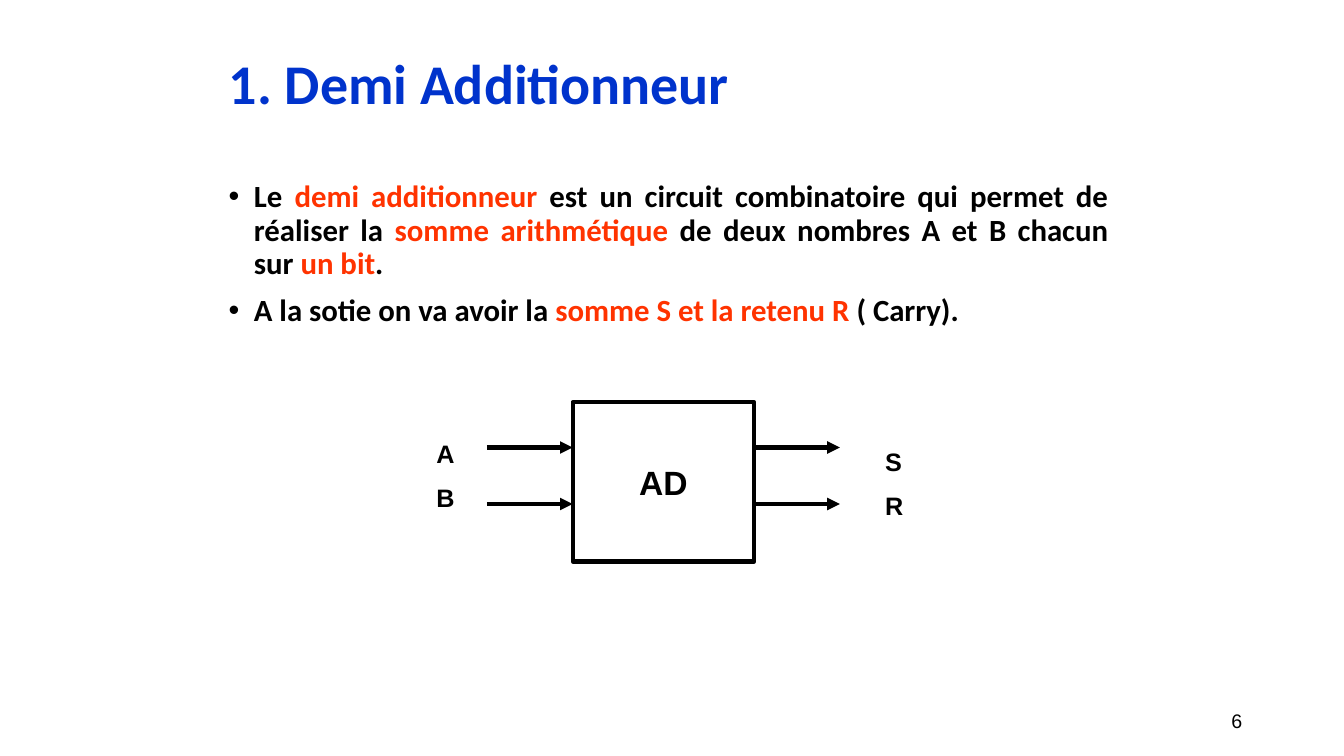
from dataclasses import dataclass

from lxml import etree
from pptx import Presentation
from pptx.dml.color import RGBColor
from pptx.enum.shapes import MSO_CONNECTOR, MSO_SHAPE
from pptx.enum.text import MSO_ANCHOR, PP_ALIGN
from pptx.oxml.ns import qn
from pptx.util import Inches, Pt

LEFT, CENTER, RIGHT, JUSTIFY = PP_ALIGN.LEFT, PP_ALIGN.CENTER, PP_ALIGN.RIGHT, PP_ALIGN.JUSTIFY
MIDDLE = MSO_ANCHOR.MIDDLE


@dataclass(frozen=True)
class Theme:
    title: RGBColor = RGBColor(0x00, 0x33, 0xCC)
    accent: RGBColor = RGBColor(0xFF, 0x33, 0x00)
    ink: RGBColor = RGBColor(0x00, 0x00, 0x00)
    heading_font: str = "Calibri"
    diagram_font: str = "Arial"
    title_size: Pt = Pt(40)
    body_size: Pt = Pt(22)
    block_size: Pt = Pt(24)
    signal_size: Pt = Pt(18)
    number_size: Pt = Pt(14)
    line: Pt = Pt(3)


theme = Theme()


def style(p, font, size, color, bold=True, align=LEFT):
    p.font.name, p.font.size, p.font.bold = font, size, bold
    p.font.color.rgb = color
    p.alignment = align


def add_text_frame(x, y, w, h, wrap=True):
    tf = slide.shapes.add_textbox(Inches(x), Inches(y), Inches(w), Inches(h)).text_frame
    tf.word_wrap = wrap
    return tf


prs = Presentation()
prs.slide_width, prs.slide_height = Inches(13.33), Inches(7.5)
slide = prs.slides.add_slide(prs.slide_layouts[5])

# Title
title = slide.shapes.title
title.left, title.top, title.width, title.height = Inches(2.17), Inches(0.3), Inches(9), Inches(1.11)
tf = title.text_frame
tf.text = "1. Demi Additionneur"
tf.vertical_anchor = MIDDLE
p = tf.paragraphs[0]
style(p, theme.heading_font, theme.title_size, theme.title)
p.line_spacing = 0.9

# Definition: each bullet is a list of (text, highlighted) runs
bullets = [
    [("Le ", False), ("demi additionneur", True),
     (" est un circuit combinatoire qui permet de réaliser la ", False),
     ("somme arithmétique", True), (" de deux nombres A et B chacun sur ", False),
     ("un bit", True), (".", False)],
    [("A la sotie on va avoir la ", False), ("somme S et la retenu R ", True),
     ("( Carry).", False)],
]
tf = add_text_frame(2.17, 1.75, 8.92, 2.08)
for i, runs in enumerate(bullets):
    p = tf.add_paragraph() if i else tf.paragraphs[0]
    style(p, theme.heading_font, theme.body_size, theme.ink, align=JUSTIFY)
    p.line_spacing, p.space_before = 0.9, Pt(10)
    pPr = p._p.get_or_add_pPr()
    pPr.set("marL", str(Inches(0.25)))
    pPr.set("indent", str(-Inches(0.25)))
    font = etree.Element(qn("a:buFont"), typeface="Arial")
    char = etree.Element(qn("a:buChar"), char="•")
    pPr.find(qn("a:defRPr")).addprevious(font)
    font.addnext(char)
    for text, highlighted in runs:
        r = p.add_run()
        r.text = text
        r.font.color.rgb = theme.accent if highlighted else theme.ink

# Half adder block
block_x, block_w = 5.68, 1.8
block = slide.shapes.add_shape(MSO_SHAPE.RECTANGLE, Inches(block_x), Inches(3.99),
                               Inches(block_w), Inches(1.58))
block.shadow.inherit = False
block.fill.background()
block.line.color.rgb, block.line.width = theme.ink, theme.line
tf = block.text_frame
tf.text = "AD"
tf.word_wrap, tf.vertical_anchor = False, MIDDLE
style(tf.paragraphs[0], theme.diagram_font, theme.block_size, theme.ink, align=CENTER)

# Input and output arrows
arrow_w = 0.85
for x in (block_x - arrow_w, block_x + block_w):
    for y in (4.44, 5):
        arrow = slide.shapes.add_connector(MSO_CONNECTOR.STRAIGHT, Inches(x), Inches(y),
                                           Inches(x + arrow_w), Inches(y))
        arrow.line.color.rgb, arrow.line.width = theme.ink, theme.line
        etree.SubElement(arrow.line._get_or_add_ln(), qn("a:tailEnd"), type="triangle")
        etree.SubElement(arrow._element.spPr, qn("a:effectLst"))

# Signal names
for signals, x, y, w in (("AB", 4.23, 4.3, 0.6), ("SR", 8.68, 4.38, 0.43)):
    tf = add_text_frame(x, y, w, 0.85)
    for i, signal in enumerate(signals):
        p = tf.add_paragraph() if i else tf.paragraphs[0]
        p.text = signal
        style(p, theme.diagram_font, theme.signal_size, theme.ink)
        p.space_before = Pt(10)

# Slide number
tf = add_text_frame(9.42, 6.95, 3, 0.4)
tf.text = "6"
tf.vertical_anchor = MIDDLE
style(tf.paragraphs[0], theme.diagram_font, theme.number_size, theme.ink, bold=False, align=RIGHT)

prs.save("out.pptx")
